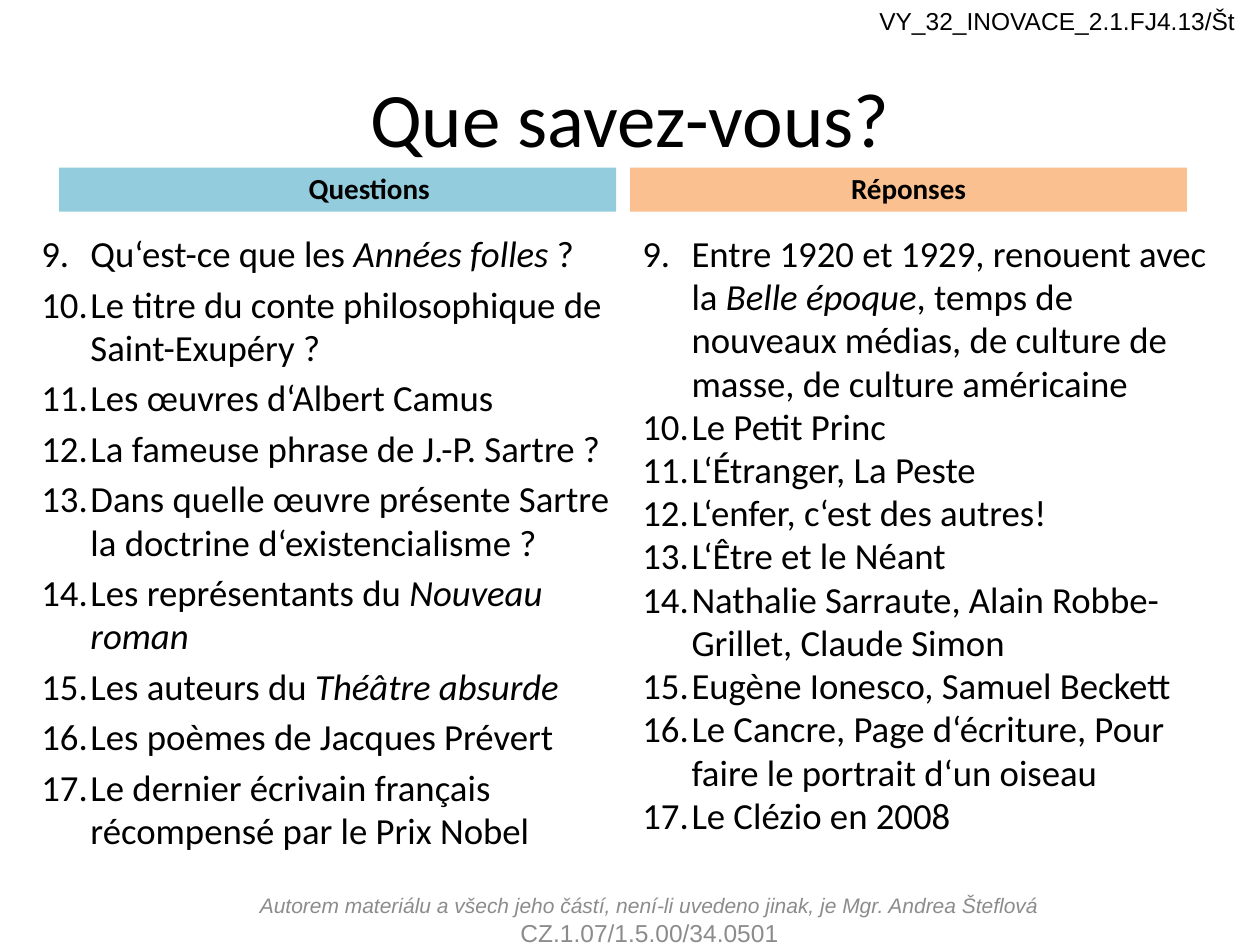
from lxml import etree
from pptx import Presentation
from pptx import util as u
from pptx.dml.color import RGBColor
from pptx.enum import shapes, text
from pptx.oxml.ns import qn

COLORS = {"black": "000000", "grey": "8C8C8C", "blue": "93CDDD", "orange": "FAC090"}
FIRST_NUMBER = 9

# Each item is a list of runs; a tuple marks an italic run
QUESTIONS = [
    ["Qu‘est-ce que les ", ("Années folles ",), "?"],
    ["Le titre du conte philosophique de Saint-Exupéry ?"],
    ["Les œuvres d‘Albert Camus"],
    ["La fameuse phrase de J.-P. Sartre ?"],
    ["Dans quelle œuvre présente Sartre la doctrine d‘existencialisme ?"],
    ["Les représentants du ", ("Nouveau roman",)],
    ["Les auteurs du ", ("Théâtre absurde",)],
    ["Les poèmes de Jacques Prévert"],
    ["Le dernier écrivain français récompensé par le Prix Nobel"],
]
ANSWERS = [
    ["Entre 1920 et 1929, renouent avec la ", ("Belle époque",),
     ", temps de nouveaux médias, de culture de masse, de culture américaine"],
    ["Le Petit Princ"],
    ["L‘Étranger, La Peste"],
    ["L‘enfer, c‘est des autres!"],
    ["L‘Être et le Néant"],
    ["Nathalie Sarraute, Alain Robbe-Grillet, Claude Simon"],
    ["Eugène Ionesco, Samuel Beckett"],
    ["Le Cancre, Page d‘écriture, Pour faire le portrait d‘un oiseau"],
    ["Le Clézio en 2008"],
]


class Deck:
    def __init__(self, prs, body="Calibri", small="Arial"):
        self.body, self.small = body, small
        self.slide = prs.slides.add_slide(prs.slide_layouts[5])

    def box(self, at):
        return [u.Inches(v) for v in at]

    def run(self, p, words, size, font, color="black", bold=False, italic=False):
        r = p.add_run()
        r.text = words
        f = r.font
        f.size, f.name, f.bold, f.italic = u.Pt(size), font, bold, italic
        f.color.rgb = RGBColor.from_string(COLORS[color])

    def indent(self, p, left, first):
        pPr = p._p.get_or_add_pPr()
        pPr.set("marL", str(u.Inches(left)))
        pPr.set("indent", str(u.Inches(first)))
        return pPr

    def title(self, words, at):
        sp = self.slide.shapes.title
        sp.left, sp.top, sp.width, sp.height = self.box(at)
        tf = sp.text_frame
        tf.vertical_anchor = text.MSO_ANCHOR.MIDDLE
        p = tf.paragraphs[0]
        p.alignment = text.PP_ALIGN.CENTER
        self.run(p, words, 44, self.body)

    def header(self, words, at, fill, indent):
        sp = self.slide.shapes.add_shape(shapes.MSO_SHAPE.RECTANGLE, *self.box(at))
        sp.shadow.inherit = False
        sp.fill.solid()
        sp.fill.fore_color.rgb = RGBColor.from_string(COLORS[fill])
        sp.line.fill.background()
        tf = sp.text_frame
        tf.vertical_anchor = text.MSO_ANCHOR.BOTTOM
        p = tf.paragraphs[0]
        p.alignment = text.PP_ALIGN.CENTER
        self.indent(p, *indent)
        self.run(p, words, 16.6, self.body, bold=True)

    def textbox(self, at, anchor=text.MSO_ANCHOR.TOP, wrap=True):
        tf = self.slide.shapes.add_textbox(*self.box(at)).text_frame
        tf.word_wrap = wrap
        tf.vertical_anchor = anchor
        return tf

    def numbered(self, items, at, before):
        tf = self.textbox(at)
        for i, item in enumerate(items):
            p = tf.add_paragraph() if i else tf.paragraphs[0]
            p.space_before = u.Pt(before)
            p.line_spacing = 0.98
            pPr = self.indent(p, 0.39, -0.39)
            etree.SubElement(pPr, qn("a:buFont"), typeface="+mj-lt")
            etree.SubElement(pPr, qn("a:buAutoNum"), type="arabicPeriod",
                             startAt=str(FIRST_NUMBER))
            for part in item:
                italic = isinstance(part, tuple)
                self.run(p, part[0] if italic else part, 21, self.body, italic=italic)

    def footer(self, lines, at):
        tf = self.textbox(at, text.MSO_ANCHOR.MIDDLE)
        for i, (words, size, italic) in enumerate(lines):
            p = tf.add_paragraph() if i else tf.paragraphs[0]
            p.alignment = text.PP_ALIGN.CENTER
            self.run(p, words, size, self.small, "grey", italic=italic)

    def code(self, words, at):
        tf = self.textbox(at, wrap=False)
        tf.auto_size = text.MSO_AUTO_SIZE.SHAPE_TO_FIT_TEXT
        self.run(tf.paragraphs[0], words, 14, self.small)


def main():
    prs = Presentation()
    prs.slide_width, prs.slide_height = u.Inches(10), u.Inches(7.5)
    deck = Deck(prs)
    deck.title("Que savez-vous?", (0.5, 0.3, 9, 1.25))

    # Question and answer columns
    columns = [
        ("Questions", 0.47, "blue", (0.79, -0.29), QUESTIONS, 0.23, 4.2),
        ("Réponses", 5, "orange", (0, 0), ANSWERS, 5, 0),
    ]
    for name, head_x, fill, indent, items, list_x, before in columns:
        deck.header(name, (head_x, 1.33, 4.42, 0.35), fill, indent)
        deck.numbered(items, (list_x, 1.8, 4.77, 5.23), before)

    # Footer and document code
    deck.footer([
        ("Autorem materiálu a všech jeho částí, není-li uvedeno jinak, "
         "je Mgr. Andrea Šteflová", 12, True),
        ("CZ.1.07/1.5.00/34.0501", 14, False),
    ], (1.95, 7.1, 6.41, 0.4))
    deck.code("VY_32_INOVACE_2.1.FJ4.13/Št", (6.88, 0, 3.12, 0.34))
    prs.save("out.pptx")


if __name__ == "__main__":
    main()
